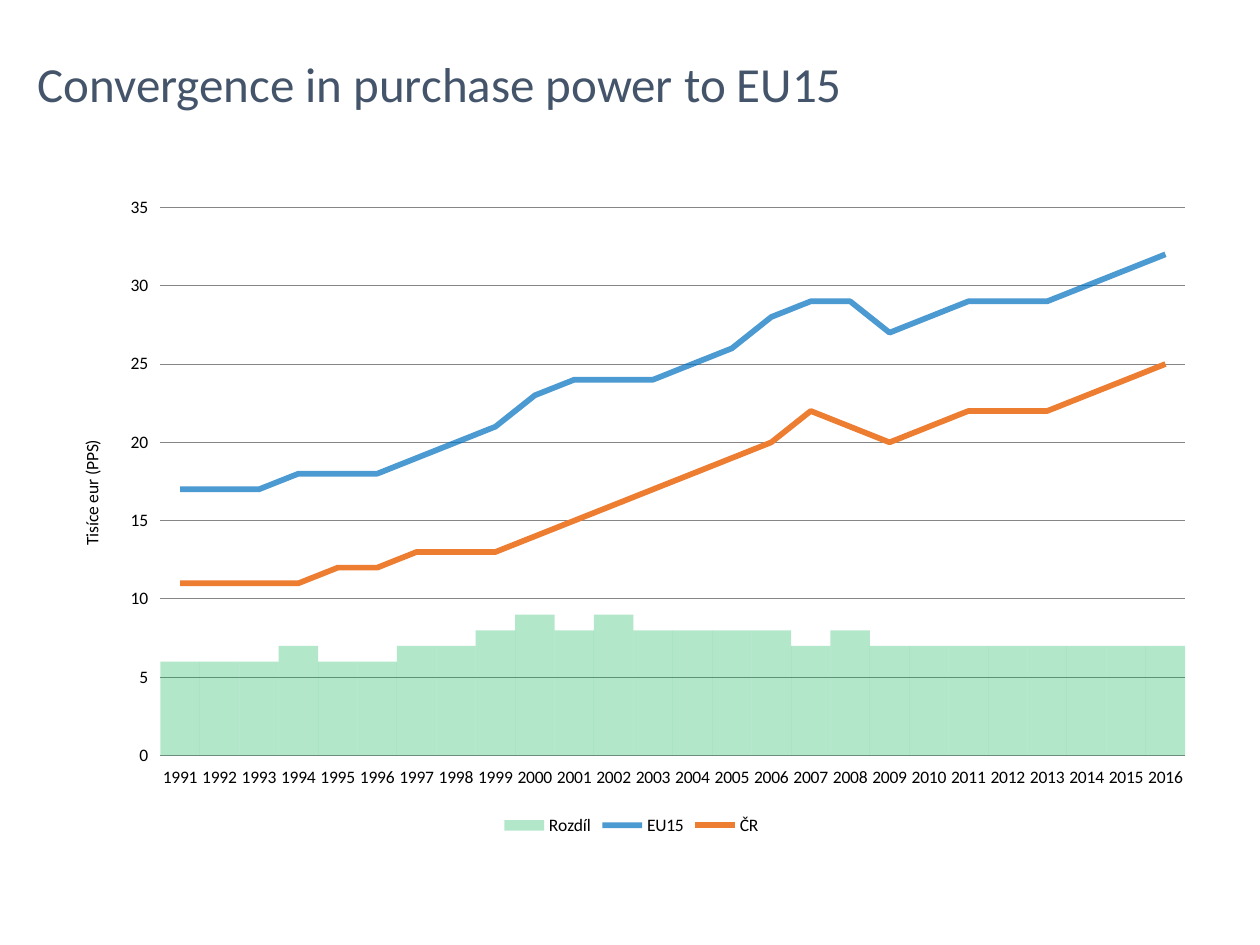
from pptx import Presentation
from pptx.chart.data import CategoryChartData as ChartData
from pptx.dml.color import RGBColor
from pptx.enum.chart import XL_CHART_TYPE as ChartType, XL_LEGEND_POSITION as LegendPosition
from pptx.enum.chart import XL_MARKER_STYLE as MarkerStyle, XL_TICK_MARK as TickMark
from pptx.enum.text import MSO_ANCHOR as Anchor, PP_ALIGN as Align
from pptx.oxml import parse_xml
from pptx.oxml.ns import nsdecls, qn
from pptx.util import Pt

HEADING = "Convergence in purchase power to EU15"
AXIS_LABEL = "Tisíce eur (PPS)"
YEARS = [str(year) for year in range(1991, 2017)]
GAP = ("Rozdíl", [6, 6, 6, 7, 6, 6, 7, 7, 8, 9, 8, 9, 8,
                  8, 8, 8, 7, 8, 7, 7, 7, 7, 7, 7, 7, 7])
EU15 = ("EU15", [17, 17, 17, 18, 18, 18, 19, 20, 21, 23, 24, 24, 24,
                 25, 26, 28, 29, 29, 27, 28, 29, 29, 29, 30, 31, 32])
CZECHIA = ("ČR", [11, 11, 11, 11, 12, 12, 13, 13, 13, 14, 15, 16, 17,
                  18, 19, 20, 22, 21, 20, 21, 22, 22, 22, 23, 24, 25])
GAP_STYLE = ("00B050", 30)
LINE_STYLES = [("0070C0", 70), ("ED7D31", 100)]
HEADING_BOX = dict(left=14.4, top=21.6, width=697.7, height=55.4)
CHART_BOX = (31, 105.8, 659.5, 374.4)
PLOT_AREA = dict(x=0.092, y=0.034, w=0.888, h=0.837)


def set_all(target, values):
    for key, value in values.items():
        setattr(target, key, value)


def paint(fill, color, opacity=100):
    fill.solid()
    fill.fore_color.rgb = RGBColor.from_string(color)
    if opacity < 100:
        tint = fill._xPr.find(qn("a:solidFill"))[0]
        tint.append(parse_xml(f'<a:alpha {nsdecls("a")} val="{opacity * 1000}"/>'))


def style_font(font, size, color):
    set_all(font, dict(name="Calibri", size=Pt(size), bold=False))
    paint(font.fill, color)


def move_to_lines(chart):
    columns = chart.element.xpath(".//c:barChart")[0]
    lines = parse_xml(f'<c:lineChart {nsdecls("c")}><c:grouping val="standard"/>'
                      '<c:varyColors val="0"/><c:marker val="1"/></c:lineChart>')
    for series in columns.xpath("./c:ser")[1:]:
        for flag in series.xpath("./c:invertIfNegative"):
            series.remove(flag)
        lines[-1].addprevious(series)
    for axis in columns.xpath("./c:axId"):
        lines.append(parse_xml(f'<c:axId {nsdecls("c")} val="{axis.get("val")}"/>'))
    columns.addnext(lines)


def place_plot(chart):
    area = chart.element.xpath(".//c:plotArea")[0]
    for layout in area.xpath("./c:layout"):
        area.remove(layout)
    sizes = "".join(f'<c:{key} val="{value}"/>' for key, value in PLOT_AREA.items())
    area.insert(0, parse_xml(
        f'<c:layout {nsdecls("c")}><c:manualLayout><c:layoutTarget val="inner"/>'
        f'<c:xMode val="edge"/><c:yMode val="edge"/>{sizes}</c:manualLayout></c:layout>'))


deck = Presentation()
set_all(deck, dict(slide_width=Pt(720), slide_height=Pt(540)))
slide = deck.slides.add_slide(deck.slide_layouts[5])

heading = slide.shapes.title
set_all(heading, {side: Pt(length) for side, length in HEADING_BOX.items()})
heading.text_frame.text = HEADING
set_all(heading.text_frame, dict(vertical_anchor=Anchor.MIDDLE, word_wrap=True))
heading_line = heading.text_frame.paragraphs[0]
set_all(heading_line, dict(alignment=Align.LEFT, line_spacing=0.9))
style_font(heading_line.runs[0].font, 28, "44546A")

income = ChartData()
income.categories = YEARS
for name, values in (GAP, EU15, CZECHIA):
    income.add_series(name, values)
chart = slide.shapes.add_chart(
    ChartType.COLUMN_CLUSTERED, *map(Pt, CHART_BOX), income).chart
set_all(chart, dict(has_title=False, has_legend=True))
style_font(chart.font, 10, "000000")
set_all(chart.legend, dict(position=LegendPosition.BOTTOM, include_in_layout=False))
move_to_lines(chart)
place_plot(chart)

columns, lines = chart.plots
set_all(columns, dict(gap_width=0, vary_by_categories=False))
paint(columns.series[0].format.fill, *GAP_STYLE)
for series, style in zip(lines.series, LINE_STYLES):
    series.smooth = False
    series.marker.style = MarkerStyle.NONE
    series.format.line.width = Pt(3.25)
    paint(series.format.line.fill, *style)

for axis in (chart.category_axis, chart.value_axis):
    set_all(axis, dict(major_tick_mark=TickMark.OUTSIDE, minor_tick_mark=TickMark.NONE))
    axis.format.line.fill.background()
thousands = chart.value_axis
set_all(thousands, dict(minimum_scale=0, maximum_scale=35, major_unit=5,
                        has_major_gridlines=True))
grid = thousands.major_gridlines.format.line
grid.width = Pt(0.5)
paint(grid.fill, "868686")
label = thousands.axis_title.text_frame
label.text = AXIS_LABEL
style_font(label.paragraphs[0].runs[0].font, 10, "000000")
thousands.axis_title.element.xpath(".//a:bodyPr")[0].set("rot", "-5400000")

deck.save("out.pptx")
